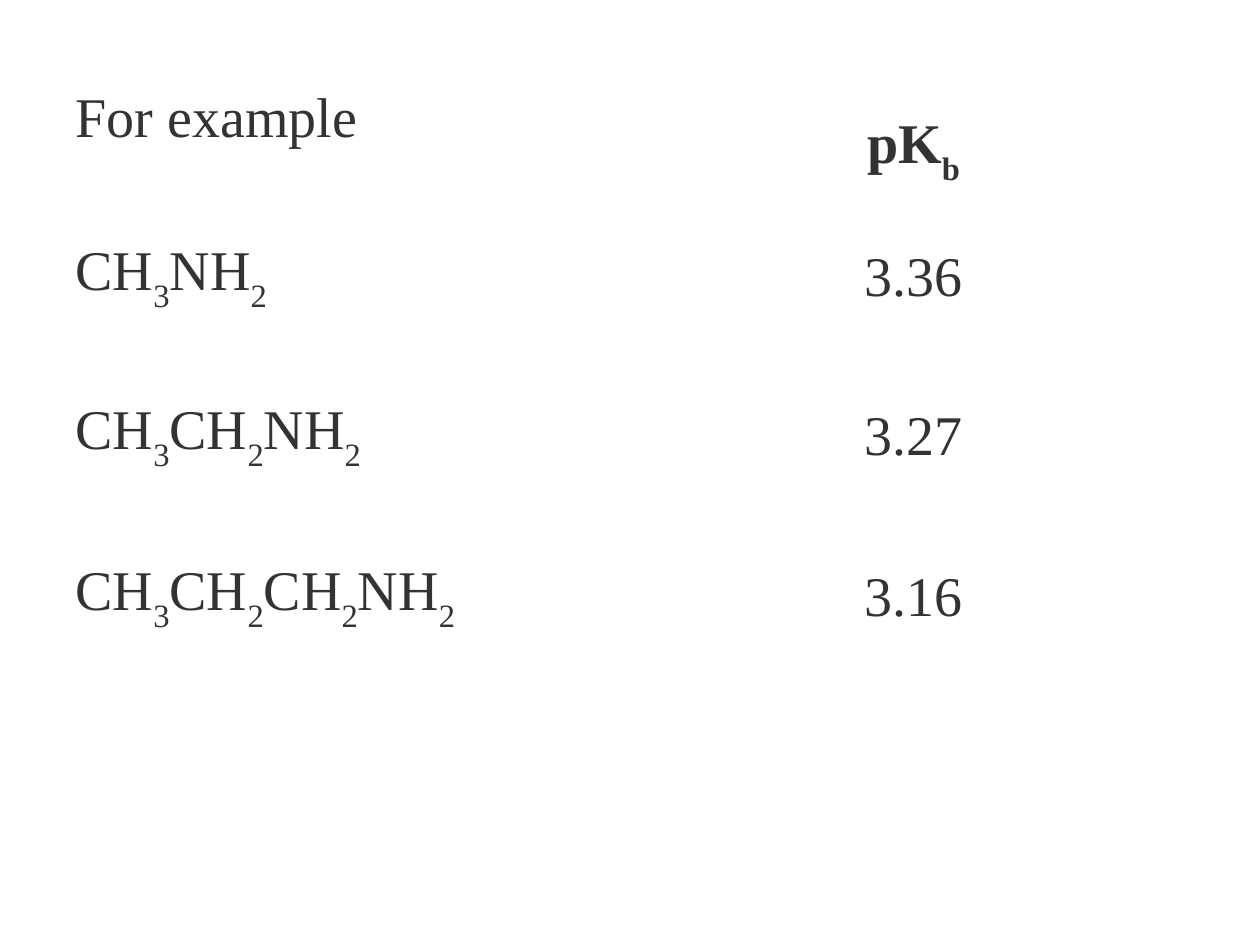
import pptx
import pptx.dml.color
import pptx.enum.text
import pptx.util

Pt = pptx.util.Pt
ALIGN = pptx.enum.text.PP_ALIGN

FONT = "Times New Roman"
TEXT_COLOUR = "333333"
HANGING = Pt(27)
HEADING_DROP = Pt(40)  # lowers the pKb heading by about half a line

# Parts between underscores alternate: normal, subscript, normal, ...
HEADINGS = ("For example", "pK_b")
AMINES = [
    ("CH_3_NH_2", "3.36"),
    ("CH_3_CH_2_NH_2", "3.27"),
    ("CH_3_CH_2_CH_2_NH_2", "3.16"),
]
ROW_HEIGHTS = [92, 90, 92, 92, 92]  # the last row stays empty


def colour(hex_string):
    return pptx.dml.color.RGBColor.from_string(hex_string)


def write_formula(cell, formula, align, bold=False):
    paragraph = cell.text_frame.paragraphs[0]
    paragraph.alignment = align
    properties = paragraph._p.get_or_add_pPr()
    properties.set("marL", str(HANGING))
    properties.set("indent", str(-HANGING))
    for index, part in enumerate(formula.split("_")):
        run = paragraph.add_run()
        run.text = part
        run.font.name = FONT
        run.font.size = Pt(32)
        run.font.bold = bold
        run.font.color.rgb = colour(TEXT_COLOUR)
        if index % 2:
            run.font._element.set("baseline", "-30000")


def add_basicity_table(slide, left, top, width, height):
    table = slide.shapes.add_table(
        len(ROW_HEIGHTS), len(HEADINGS), left, top, width, height
    ).table
    table.first_row = False
    table.horz_banding = False
    for row, row_height in zip(table.rows, ROW_HEIGHTS):
        row.height = Pt(row_height)

    # Plain cells, centred vertically
    for cell in table.iter_cells():
        cell.fill.background()
        cell.vertical_anchor = pptx.enum.text.MSO_ANCHOR.MIDDLE

    # Headings and amines on the left, pKb values on the right
    for row_index, (amine, pkb) in enumerate([HEADINGS, *AMINES]):
        write_formula(table.cell(row_index, 0), amine, ALIGN.LEFT)
        write_formula(table.cell(row_index, 1), pkb, ALIGN.CENTER, bold=row_index == 0)
    table.cell(0, 1).margin_top = HEADING_DROP


def main():
    presentation = pptx.Presentation()
    presentation.slide_width = Pt(720)
    presentation.slide_height = Pt(540)
    slide = presentation.slides.add_slide(presentation.slide_layouts[6])
    add_basicity_table(slide, Pt(36), Pt(21.6), Pt(648), Pt(sum(ROW_HEIGHTS)))
    presentation.save("out.pptx")


if __name__ == "__main__":
    main()
